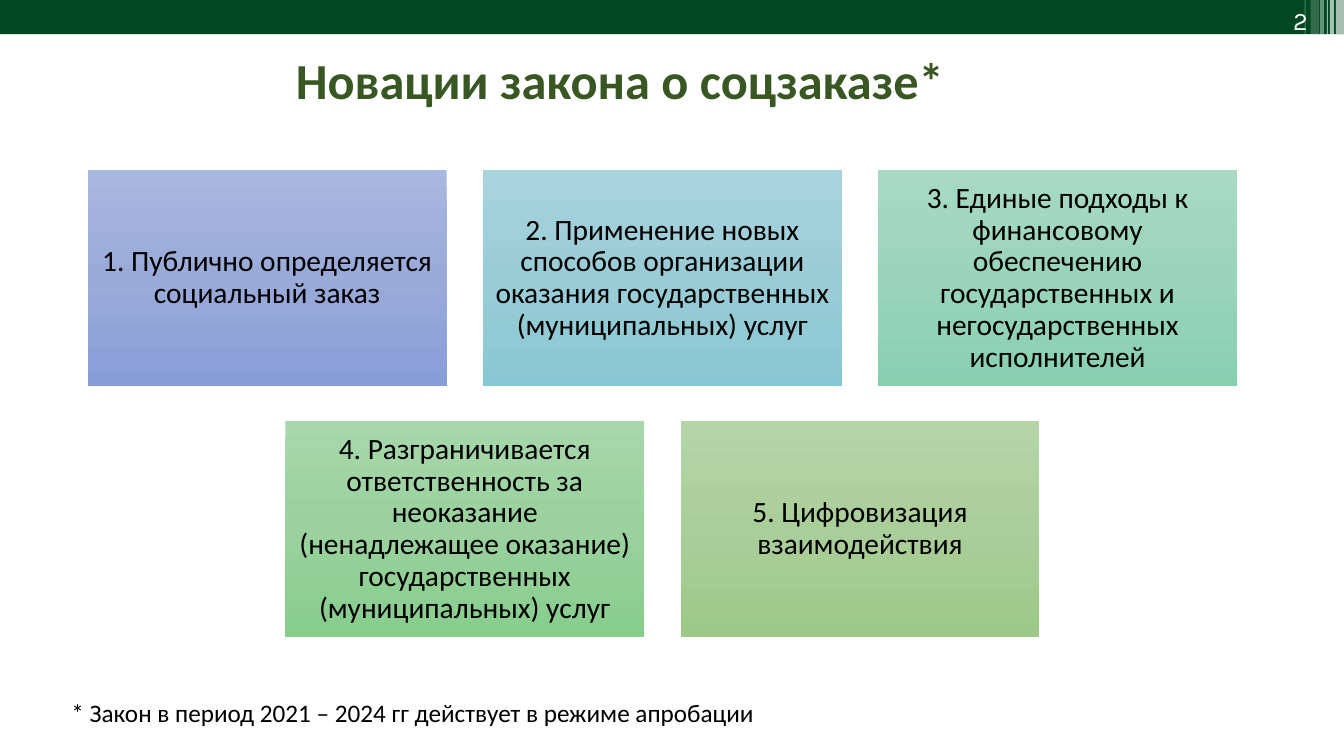
from copy import deepcopy

from pptx import Presentation
from pptx import util as u
from pptx.dml import color
from pptx.enum import shapes, text
from pptx.oxml import ns
from lxml import etree

PX = 9144
INNOVATIONS = [
    [("1. Публично определяется социальный заказ", ("A8B7DF", "9AABD9", "889ED7")),
     ("2. Применение новых способов организации оказания государственных (муниципальных) услуг",
      ("A8D4DD", "9ACCD6", "88C8D4")),
     ("3. Единые подходы к финансовому обеспечению государственных и негосударственных исполнителей",
      ("A8DAC3", "9AD4B9", "87D1AF"))],
    [("4. Разграничивается ответственность за неоказание (ненадлежащее оказание) "
      "государственных (муниципальных) услуг", ("A7D7AB", "9AD19E", "87CD8C")),
     ("5. Цифровизация взаимодействия", ("B5D5A7", "AACE9A", "9CC987"))],
]
STRIPES = [(1325, 8, 34, 65), (1319, 4, 34, 65), (1316, 1, 34, 60),
           (1309, 4, 34, 40), (1300, 8, 36, 20), (1294, 1, 36, 30)]


def emu(*lengths):
    """Turn px lengths into EMU."""
    return [u.Emu(length * PX) for length in lengths]


def rgb(hex_code):
    """Turn a hex string into a colour."""
    return color.RGBColor.from_string(hex_code)


def add_rect(slide, box):
    """Add a rectangle without line or shadow."""
    rect = slide.shapes.add_shape(shapes.MSO_SHAPE.RECTANGLE, *emu(*box))
    rect.shadow.inherit = False
    rect.line.fill.background()
    return rect


def write(frame, words, size, hex_code, align, font="Calibri", bold=False,
          spacing=1.0, anchor=text.MSO_ANCHOR.TOP):
    """Fill a text frame with one formatted paragraph."""
    frame.text = words
    frame.word_wrap = True
    frame.auto_size = text.MSO_AUTO_SIZE.NONE
    frame.vertical_anchor = anchor
    paragraph = frame.paragraphs[0]
    paragraph.alignment = align
    paragraph.line_spacing = spacing
    style = paragraph.runs[0].font
    style.name, style.size, style.bold = font, u.Pt(size), bold
    style.color.rgb = rgb(hex_code)


def add_header(slide, box):
    """Draw the green band with its stripes and page number."""
    left, top, width, height = box
    band = add_rect(slide, box)
    band.fill.solid()
    band.fill.fore_color.rgb = rgb("004821")
    for offset, stripe_width, stripe_height, opacity in STRIPES:
        stripe = add_rect(slide, (left + offset, top, stripe_width, stripe_height))
        stripe.fill.solid()
        stripe.fill.fore_color.rgb = rgb("FFFFFF")
        white = stripe.fill._xPr.find(".//" + ns.qn("a:srgbClr"))
        etree.SubElement(white, ns.qn("a:alpha"), val=str(opacity * 1000))
    page_number = slide.shapes.add_textbox(*emu(left + 1187, top, 120, height + 3))
    write(page_number.text_frame, "2", 18, "FFFFFF", text.PP_ALIGN.RIGHT, font="Karla")


def add_title(slide, box):
    """Place and format the title."""
    title = slide.shapes.title
    title.left, title.top, title.width, title.height = emu(*box)
    write(title.text_frame, "Новации закона о соцзаказе*", 36, "385723",
          text.PP_ALIGN.CENTER, bold=True, spacing=0.9)


def add_card(slide, box, words, shades):
    """Draw one innovation card with a vertical gradient."""
    card = add_rect(slide, box)
    card.fill.gradient()
    card.fill.gradient_angle = 270
    stop_list = card._element.spPr.find(".//" + ns.qn("a:gsLst"))
    stop_list.insert(1, deepcopy(stop_list[0]))
    for stop, position, shade in zip(card.fill.gradient_stops, (0, 0.5, 1), shades):
        stop.position = position
        stop.color.rgb = rgb(shade)
    frame = card.text_frame
    frame.margin_left, frame.margin_top, frame.margin_right, frame.margin_bottom = emu(9, 9, 9, 9)
    write(frame, words, 21, "000000", text.PP_ALIGN.CENTER, spacing=0.9,
          anchor=text.MSO_ANCHOR.MIDDLE)


def add_innovations(slide, box):
    """Lay out the rows of cards, each row centred in the box."""
    left, top, width, height = box
    gap_x, gap_y = 36, 35
    card_width = (width - 2 * gap_x) // 3
    card_height = (height - gap_y) // 2
    for row, cards in enumerate(INNOVATIONS):
        row_width = len(cards) * (card_width + gap_x) - gap_x
        row_left = left + (width - row_width) // 2
        for column, (words, shades) in enumerate(cards):
            add_card(slide, (row_left + column * (card_width + gap_x),
                             top + row * (card_height + gap_y),
                             card_width, card_height), words, shades)


def add_footnote(slide, box):
    """Write the footnote under the cards."""
    footnote = slide.shapes.add_textbox(*emu(*box))
    write(footnote.text_frame, "* Закон в период 2021 – 2024 гг действует в режиме апробации",
          18, "000000", text.PP_ALIGN.LEFT)


def main():
    """Build and save the slide."""
    deck = Presentation()
    deck.slide_width, deck.slide_height = emu(1333, 750)
    slide = deck.slides.add_slide(deck.slide_layouts[5])
    add_header(slide, (0, 0, 1333, 34))
    add_title(slide, (43, 51, 1144, 141))
    add_innovations(slide, (87, 169, 1140, 463))
    add_footnote(slide, (61, 687, 1239, 40))
    deck.save("out.pptx")


if __name__ == "__main__":
    main()
